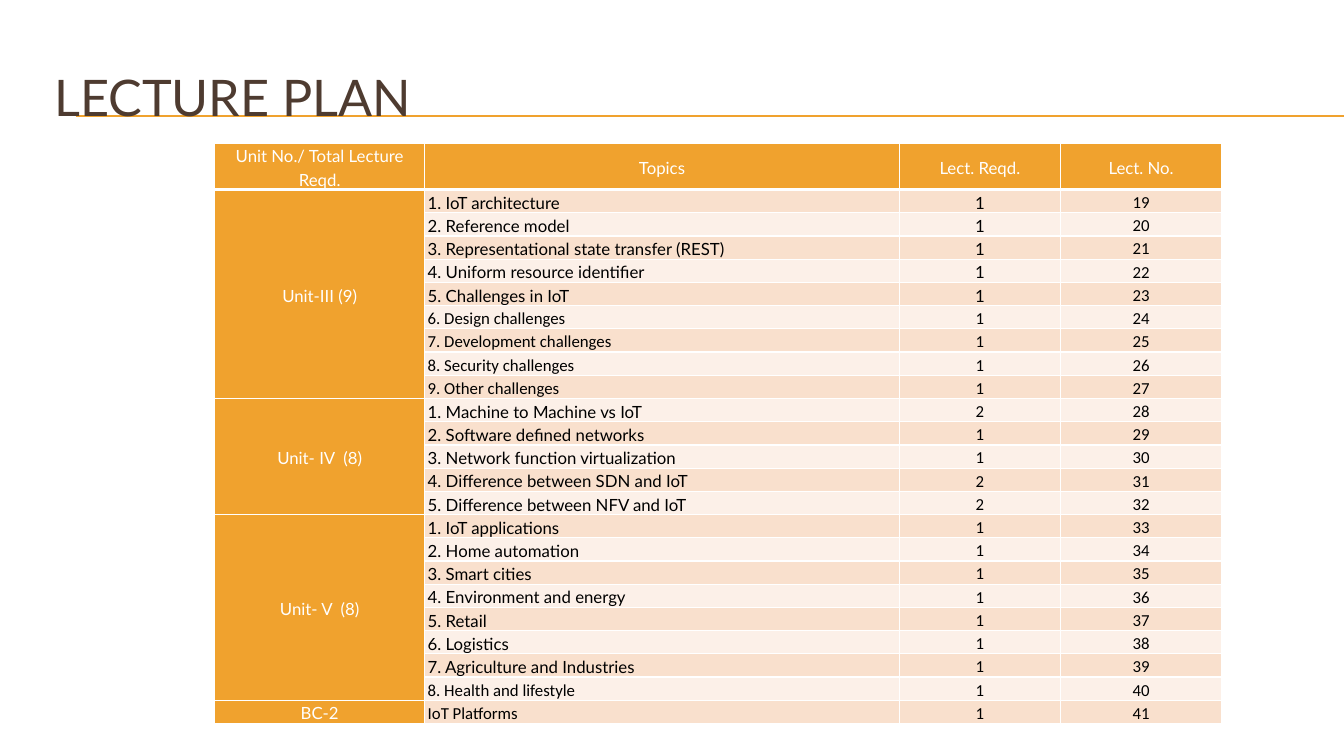
from dataclasses import dataclass
from itertools import count
from typing import NamedTuple

from lxml.etree import SubElement
from pptx import Presentation
from pptx.dml.color import RGBColor as RGB
from pptx.enum.text import MSO_ANCHOR as Anchor, PP_ALIGN as Align
from pptx.oxml.ns import qn
from pptx.util import Emu, Inches, Pt

SLIDE_W, SLIDE_H = Inches(13.33), Inches(7.5)
GRID_COLS, GRID_ROWS = 160, 90


@dataclass(frozen=True)
class Theme:
    accent: str = "F0A22E"
    title: str = "4E3B30"
    text: str = "000000"
    white: str = "FFFFFF"
    bands: tuple[str, str] = ("F9E0CD", "FCF0E8")
    main_font: str = "Lato"
    alt_font: str = "Calibri"
    title_size: float = 36
    table_size: float = 12
    rule_width: float = 0.75
    border: float = 1
    header_border: float = 3
    line_spacing: float = 1.15


THEME = Theme()


class Topic(NamedTuple):
    text: str
    lectures: int = 1
    font: str = THEME.main_font
    lectures_font: str = THEME.alt_font


class Unit(NamedTuple):
    label: str
    topics: list[Topic]


class CellStyle(NamedTuple):
    fill: str
    color: str = THEME.text
    font: str = THEME.main_font
    align: Align = Align.CENTER
    bottom: float = THEME.border


MAIN, ALT = THEME.main_font, THEME.alt_font
HEADERS = ["Unit No./ Total Lecture Reqd.", "Topics", "Lect. Reqd.", "Lect. No."]
FIRST_LECTURE = 19
UNITS = [
    Unit("Unit-III (9)", [
        Topic("1. IoT architecture", lectures_font=MAIN),
        Topic("2. Reference model", lectures_font=MAIN),
        Topic("3. Representational state transfer (REST)", lectures_font=MAIN),
        Topic("4. Uniform resource identifier", lectures_font=MAIN),
        Topic("5. Challenges in IoT", lectures_font=MAIN),
        Topic("6. Design challenges", font=ALT),
        Topic("7. Development challenges", font=ALT),
        Topic("8. Security challenges", font=ALT),
        Topic("9. Other challenges", font=ALT),
    ]),
    Unit("Unit- IV  (8)", [
        Topic("1. Machine to Machine vs IoT", 2),
        Topic("2. Software defined networks"),
        Topic("3. Network function virtualization"),
        Topic("4. Difference between SDN and IoT", 2),
        Topic("5. Difference between NFV and IoT", 2),
    ]),
    Unit("Unit- V  (8)", [
        Topic("1. IoT applications"),
        Topic("2. Home automation"),
        Topic("3. Smart cities"),
        Topic("4. Environment and energy"),
        Topic("5. Retail"),
        Topic("6. Logistics"),
        Topic("7. Agriculture and Industries"),
        Topic("8. Health and lifestyle", font=ALT),
    ]),
    Unit("BC-2", [Topic("IoT Platforms", font=ALT)]),
]

RULE_LEFT, RULE_ROWS = 9, (13.8, 13.92)
TITLE_BOX = (5.28, 6, 152, 11)
TABLE_LEFT, TABLE_TOP = 25.56, 17.04
COLUMN_WIDTHS = (25, 56.5, 19.2, 19.2)
HEADER_HEIGHT, ROW_HEIGHT = 5.16, 2.64


def cols(n: float) -> Emu:
    return Emu(round(SLIDE_W * n / GRID_COLS))


def rows(n: float) -> Emu:
    return Emu(round(SLIDE_H * n / GRID_ROWS))


def add_rule(slide, row: float) -> None:
    line = slide.shapes.add_connector(1, cols(RULE_LEFT), rows(row), SLIDE_W, rows(row))
    line.line.color.rgb = RGB.from_string(THEME.accent)
    line.line.width = Pt(THEME.rule_width)
    SubElement(line._element.spPr, qn("a:effectLst"))


def set_font(p, name: str, size: float, color: str) -> None:
    p.font.name, p.font.size = name, Pt(size)
    p.font.color.rgb = RGB.from_string(color)


def add_title(slide, text: str) -> None:
    left, top, width, height = TITLE_BOX
    tf = slide.shapes.add_textbox(cols(left), rows(top), cols(width), rows(height)).text_frame
    tf.word_wrap, tf.vertical_anchor = True, Anchor.MIDDLE
    p = tf.paragraphs[0]
    p.text = text
    set_font(p, THEME.main_font, THEME.title_size, THEME.title)


def style_cell(cell, style: CellStyle) -> None:
    """Give the cell its borders first, then its fill, as the schema orders them."""
    props = cell._tc.get_or_add_tcPr()
    for side in "LRTB":
        width = style.bottom if side == "B" else THEME.border
        ln = SubElement(props, qn(f"a:ln{side}"), w=str(Pt(width)))
        SubElement(SubElement(ln, qn("a:solidFill")), qn("a:srgbClr"), val=THEME.white)
    cell.fill.solid()
    cell.fill.fore_color.rgb = RGB.from_string(style.fill)
    cell.vertical_anchor = Anchor.MIDDLE
    cell.margin_left = cell.margin_right = Inches(0.03)
    cell.margin_top = cell.margin_bottom = 0


def write_cell(cell, text: str, style: CellStyle) -> None:
    style_cell(cell, style)
    p = cell.text_frame.paragraphs[0]
    p.text, p.alignment, p.line_spacing = text, style.align, THEME.line_spacing
    set_font(p, style.font, THEME.table_size, style.color)


def add_plan(slide) -> None:
    n_topics = sum(len(unit.topics) for unit in UNITS)
    table = slide.shapes.add_table(
        n_topics + 1, len(HEADERS), cols(TABLE_LEFT), rows(TABLE_TOP),
        cols(sum(COLUMN_WIDTHS)), rows(HEADER_HEIGHT + n_topics * ROW_HEIGHT)).table
    table.first_row = table.horz_banding = False
    for column, width in zip(table.columns, COLUMN_WIDTHS):
        column.width = cols(width)
    for i, row in enumerate(table.rows):
        row.height = rows(ROW_HEIGHT if i else HEADER_HEIGHT)

    unit_style = CellStyle(THEME.accent, THEME.white)
    for i, header in enumerate(HEADERS):
        write_cell(table.cell(0, i), header, unit_style._replace(bottom=THEME.header_border))

    row_numbers = count(1)
    for unit in UNITS:
        unit_rows = [next(row_numbers) for _ in unit.topics]
        for i, topic in zip(unit_rows, unit.topics):
            band = CellStyle(THEME.bands[(i - 1) % 2])
            style_cell(table.cell(i, 0), unit_style)
            write_cell(table.cell(i, 1), topic.text,
                       band._replace(font=topic.font, align=Align.LEFT))
            write_cell(table.cell(i, 2), str(topic.lectures),
                       band._replace(font=topic.lectures_font))
            write_cell(table.cell(i, 3), str(FIRST_LECTURE + i - 1), band._replace(font=ALT))
        label = table.cell(unit_rows[0], 0)
        if len(unit_rows) > 1:
            label.merge(table.cell(unit_rows[-1], 0))
        p = label.text_frame.paragraphs[0]
        p.text, p.alignment, p.line_spacing = unit.label, Align.CENTER, THEME.line_spacing
        set_font(p, unit_style.font, THEME.table_size, unit_style.color)


def main() -> None:
    prs = Presentation()
    prs.slide_width, prs.slide_height = SLIDE_W, SLIDE_H
    slide = prs.slides.add_slide(prs.slide_layouts[6])
    for row in RULE_ROWS:
        add_rule(slide, row)
    add_title(slide, "LECTURE PLAN")
    add_plan(slide)
    prs.save("out.pptx")


if __name__ == "__main__":
    main()
